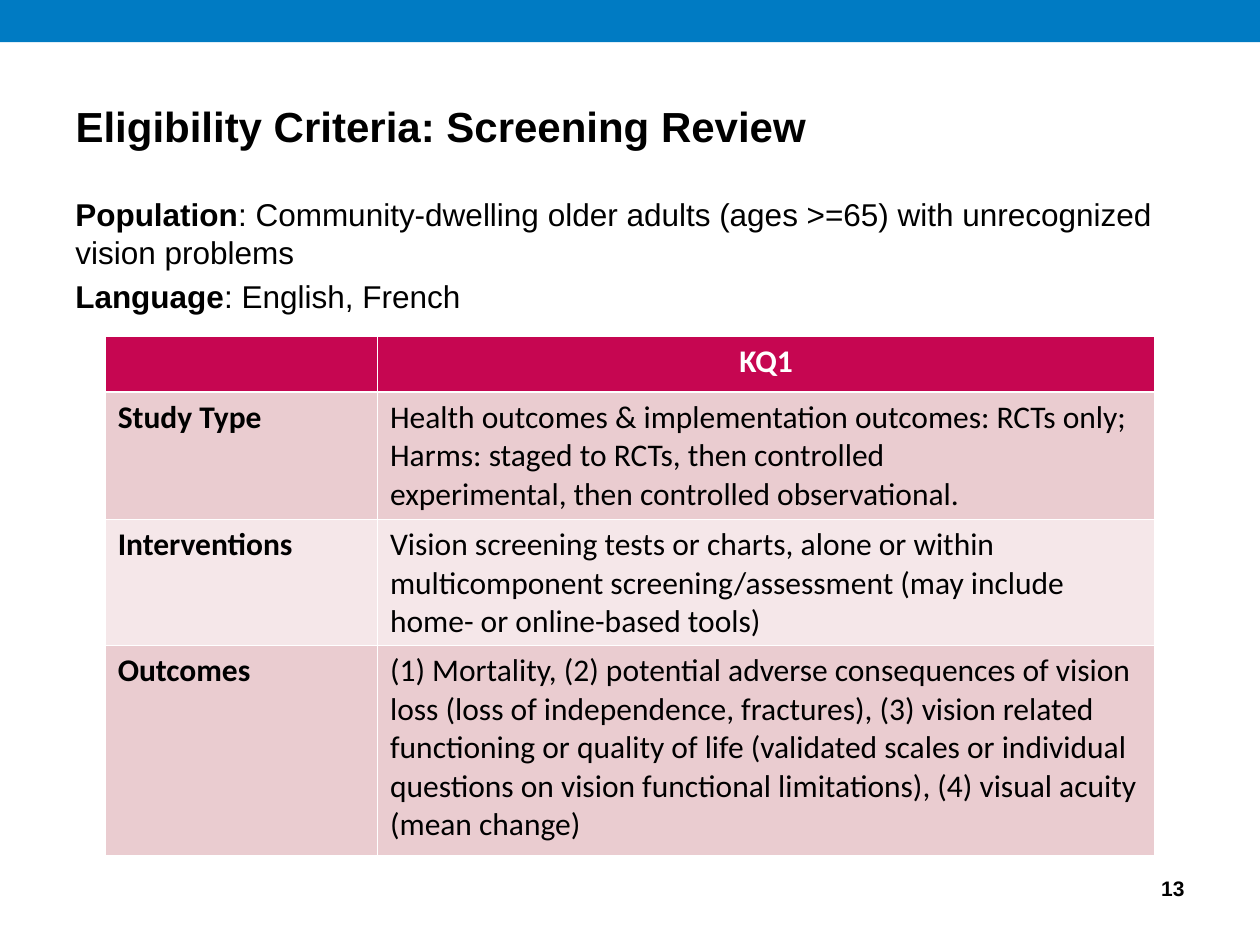
import dataclasses

import pptx
import pptx.dml.color
import pptx.enum.shapes
import pptx.enum.text
import pptx.util

Cm = pptx.util.Cm
Pt = pptx.util.Pt
RGBColor = pptx.dml.color.RGBColor
Align = pptx.enum.text.PP_ALIGN
Anchor = pptx.enum.text.MSO_ANCHOR

BLUE = RGBColor(0x00, 0x7B, 0xC3)
CRIMSON = RGBColor(0xC6, 0x06, 0x51)
DARK_BAND = RGBColor(0xEA, 0xCC, 0xD0)
LIGHT_BAND = RGBColor(0xF5, 0xE7, 0xE9)
BLACK = RGBColor(0x00, 0x00, 0x00)
WHITE = RGBColor(0xFF, 0xFF, 0xFF)


@dataclasses.dataclass(frozen=True)
class Criterion:
    label: str
    paragraphs: tuple[str, ...]
    height: float  # centimetres


HEADER_HEIGHT = 1.12
COLUMN_WIDTHS = (5.49, 15.67)
CRITERIA = (
    Criterion("Study Type", (
        "Health outcomes & implementation outcomes: RCTs only; "
        "Harms: staged to RCTs, then controlled",
        "experimental, then controlled observational.",
    ), 2.57),
    Criterion("Interventions", (
        "Vision screening tests or charts, alone or within multicomponent "
        "screening/assessment (may include home- or online-based tools)",
    ), 2.49),
    Criterion("Outcomes", (
        "(1) Mortality, (2) potential adverse consequences of vision loss "
        "(loss of independence, fractures), (3) vision related functioning or "
        "quality of life (validated scales or individual questions on vision "
        "functional limitations), (4) visual acuity (mean change)",
    ), 4.24),
)
SCOPE = (
    ("Population", ": Community-dwelling older adults (ages >=65) with "
                   "unrecognized vision problems"),
    ("Language", ": English, French"),
)


def add_run(paragraph, text: str, size: float, bold: bool,
            font: str = "Arial", color: RGBColor = BLACK) -> None:
    run = paragraph.add_run()
    run.text = text
    run.font.name = font
    run.font.size = Pt(size)
    run.font.bold = bold
    run.font.color.rgb = color


def add_text_frame(slide, left: float, top: float, width: float, height: float):
    shape = slide.shapes.add_textbox(Cm(left), Cm(top), Cm(width), Cm(height))
    shape.text_frame.word_wrap = True
    return shape.text_frame


def get_paragraph(text_frame, index: int):
    return text_frame.add_paragraph() if index else text_frame.paragraphs[0]


def fill_cell(cell, fill: RGBColor, paragraphs: tuple[str, ...] = (),
              bold: bool = False, color: RGBColor = BLACK,
              alignment=Align.LEFT) -> None:
    cell.fill.solid()
    cell.fill.fore_color.rgb = fill
    for index, text in enumerate(paragraphs):
        paragraph = get_paragraph(cell.text_frame, index)
        paragraph.alignment = alignment
        add_run(paragraph, text, 18, bold, "Calibri", color)


def add_criteria_table(slide) -> None:
    heights = [HEADER_HEIGHT] + [criterion.height for criterion in CRITERIA]
    table = slide.shapes.add_table(
        len(heights), len(COLUMN_WIDTHS), Cm(2.12), Cm(6.78),
        Cm(sum(COLUMN_WIDTHS)), Cm(sum(heights))).table
    for column, width in zip(table.columns, COLUMN_WIDTHS):
        column.width = Cm(width)
    for row, height in zip(table.rows, heights):
        row.height = Cm(height)

    fill_cell(table.cell(0, 0), CRIMSON)
    fill_cell(table.cell(0, 1), CRIMSON, ("KQ1",), True, WHITE, Align.CENTER)
    for row_index, criterion in enumerate(CRITERIA, start=1):
        fill = DARK_BAND if row_index % 2 else LIGHT_BAND
        fill_cell(table.cell(row_index, 0), fill, (criterion.label,), bold=True)
        fill_cell(table.cell(row_index, 1), fill, criterion.paragraphs)


def main() -> None:
    presentation = pptx.Presentation()
    presentation.slide_width = Cm(25.4)
    presentation.slide_height = Cm(19.05)
    slide = presentation.slides.add_slide(presentation.slide_layouts[5])

    # Top band
    band = slide.shapes.add_shape(
        pptx.enum.shapes.MSO_SHAPE.RECTANGLE, 0, 0, Cm(25.4), Cm(0.85))
    band.shadow.inherit = False
    band.fill.solid()
    band.fill.fore_color.rgb = BLUE
    band.line.fill.background()

    # Title
    title = slide.shapes.title
    title.left, title.top = Cm(1.27), Cm(1.48)
    title.width, title.height = Cm(22.86), Cm(2.1)
    title.text_frame.vertical_anchor = Anchor.MIDDLE
    title_paragraph = title.text_frame.paragraphs[0]
    title_paragraph.alignment = Align.LEFT
    add_run(title_paragraph, "Eligibility Criteria: Screening Review", 24, True)

    # Population and language
    scope_frame = add_text_frame(slide, 1.27, 3.81, 22.86, 2.9)
    for index, (label, description) in enumerate(SCOPE):
        paragraph = get_paragraph(scope_frame, index)
        if index:
            paragraph.space_before = Pt(3.6)
        add_run(paragraph, label, 18, True)
        add_run(paragraph, description, 18, False)

    # Criteria
    add_criteria_table(slide)

    # Slide number
    number_frame = add_text_frame(slide, 18.2, 17.4, 5.93, 1.02)
    number_frame.vertical_anchor = Anchor.MIDDLE
    number_frame.paragraphs[0].alignment = Align.RIGHT
    add_run(number_frame.paragraphs[0], "13", 12, True)

    presentation.save("out.pptx")


if __name__ == "__main__":
    main()
